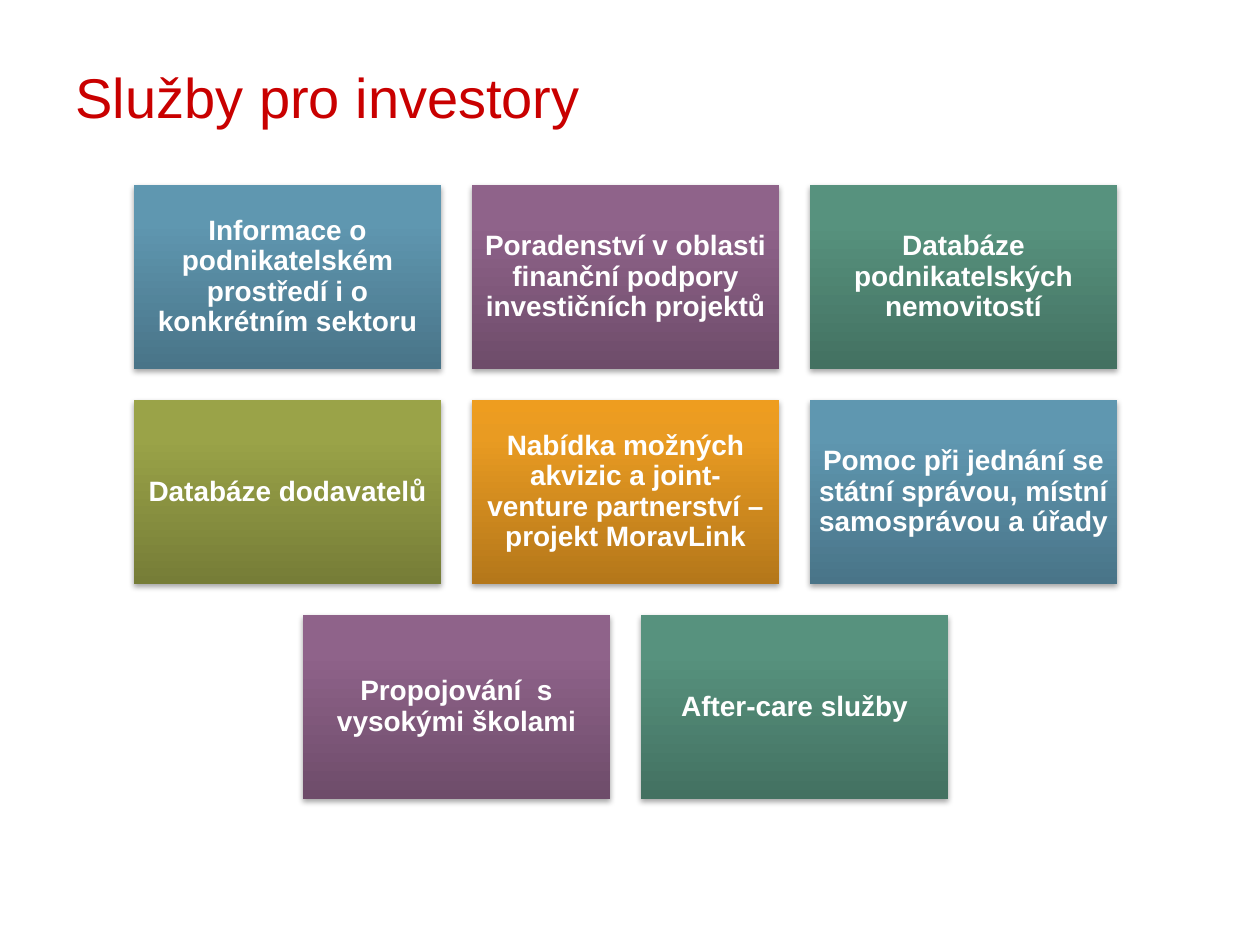
from dataclasses import dataclass

from lxml import etree
from pptx import Presentation
from pptx.dml.color import RGBColor
from pptx.enum.shapes import MSO_SHAPE
from pptx.enum.text import MSO_ANCHOR, PP_ALIGN
from pptx.oxml.ns import qn
from pptx.util import Pt

PX = 914400 // 126
RECTANGLE = MSO_SHAPE.RECTANGLE
MIDDLE = MSO_ANCHOR.MIDDLE
LEFT, CENTER = PP_ALIGN.LEFT, PP_ALIGN.CENTER


@dataclass(frozen=True)
class Theme:
    font: str = "Arial"
    title_size: int = 32
    tile_size: int = 16
    title_color: str = "C90000"
    tile_text: str = "FFFFFF"
    shadow: str = "000000"
    # Gradient colours from the bottom to the top of a tile
    blue: tuple = ("497488", "5F97B0", "5E98B2")
    purple: tuple = ("6E4C6A", "8F638A", "90628B")
    green: tuple = ("437161", "57927E", "56947F")
    olive: tuple = ("767D37", "9AA348", "9CA546")
    orange: tuple = ("B4771A", "E99B22", "EE9D1F")


theme = Theme()
palette = (theme.blue, theme.purple, theme.green, theme.olive, theme.orange)
GRADIENT_STOPS = (0, 80000, 100000)

TILE_WIDTH, TILE_HEIGHT, GAP = 307, 184, 31
GRID_CENTER, GRID_TOP = 625, 185
TILE_INSET = 9

service_rows = (
    (
        "Informace o podnikatelském prostředí i o konkrétním sektoru",
        "Poradenství v oblasti finanční podpory investičních projektů",
        "Databáze podnikatelských nemovitostí",
    ),
    (
        "Databáze dodavatelů",
        "Nabídka možných akvizic a joint-venture partnerství – projekt MoravLink",
        "Pomoc při jednání se státní správou, místní samosprávou a úřady",
    ),
    (
        "Propojování  s vysokými školami",
        "After-care služby",
    ),
)


def add_text(text_frame, text, size, color, alignment, bold=False):
    text_frame.word_wrap = True
    text_frame.vertical_anchor = MIDDLE
    paragraph = text_frame.paragraphs[0]
    paragraph.alignment = alignment
    run = paragraph.add_run()
    run.text = text
    run.font.name = theme.font
    run.font.size = Pt(size)
    run.font.bold = bold
    run.font.color.rgb = RGBColor.from_string(color)
    return paragraph


def style_tile(shape, colors):
    # Three-stop gradient, running upwards
    shape.fill.gradient()
    shape.fill.gradient_angle = 90
    stops = shape.element.spPr.find(".//" + qn("a:gsLst"))
    for stop in list(stops):
        stops.remove(stop)
    for position, color in zip(GRADIENT_STOPS, colors):
        stop = etree.SubElement(stops, qn("a:gs"), pos=str(position))
        etree.SubElement(stop, qn("a:srgbClr"), val=color)
    shape.line.fill.background()

    # Soft shadow below the tile
    shape.shadow.inherit = False
    effects = shape.element.spPr.find(qn("a:effectLst"))
    shadow = etree.SubElement(effects, qn("a:outerShdw"), blurRad="40000",
                              dist="23000", dir="5400000", rotWithShape="0")
    color = etree.SubElement(shadow, qn("a:srgbClr"), val=theme.shadow)
    etree.SubElement(color, qn("a:alpha"), val="35000")


presentation = Presentation()
presentation.slide_width = 1260 * PX
presentation.slide_height = 945 * PX
slide = presentation.slides.add_slide(presentation.slide_layouts[5])

# Title
title = slide.shapes.title
title.left, title.top, title.width, title.height = (
    63 * PX, 38 * PX, 1133 * PX, 117 * PX)
add_text(title.text_frame, "Služby pro investory", theme.title_size,
         theme.title_color, LEFT)

# Service tiles: centred rows, colours taken in turn
tile_number = 0
for row, services in enumerate(service_rows):
    row_width = len(services) * (TILE_WIDTH + GAP) - GAP
    row_left = GRID_CENTER - row_width // 2
    top = GRID_TOP + row * (TILE_HEIGHT + GAP)
    for column, service in enumerate(services):
        left = row_left + column * (TILE_WIDTH + GAP)
        tile = slide.shapes.add_shape(RECTANGLE, left * PX, top * PX,
                                      TILE_WIDTH * PX, TILE_HEIGHT * PX)
        style_tile(tile, palette[tile_number % len(palette)])
        text_frame = tile.text_frame
        text_frame.margin_left = text_frame.margin_right = TILE_INSET * PX
        text_frame.margin_top = text_frame.margin_bottom = TILE_INSET * PX
        paragraph = add_text(text_frame, service, theme.tile_size,
                             theme.tile_text, CENTER, bold=True)
        paragraph.line_spacing = 0.9
        tile_number += 1

presentation.save("out.pptx")
